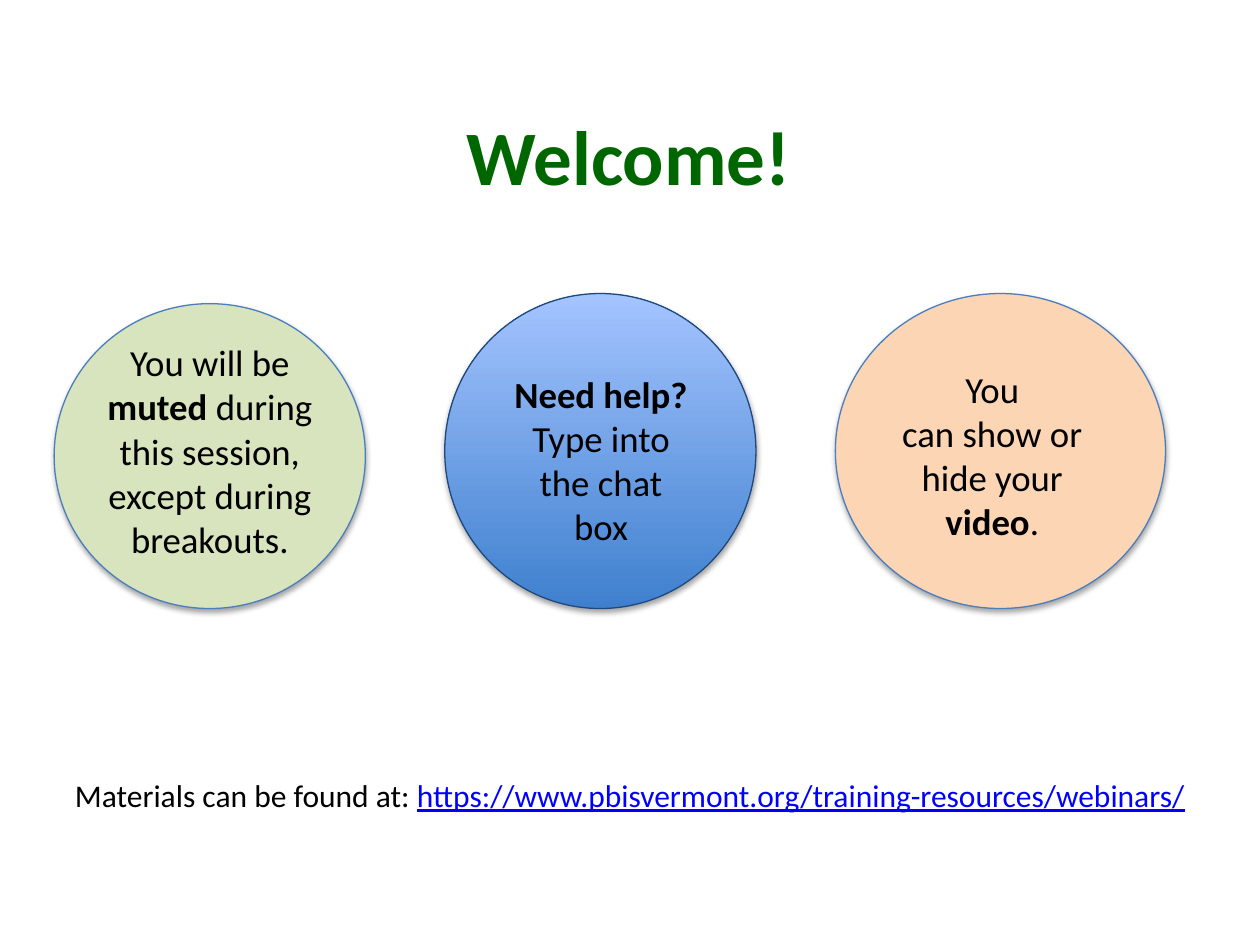
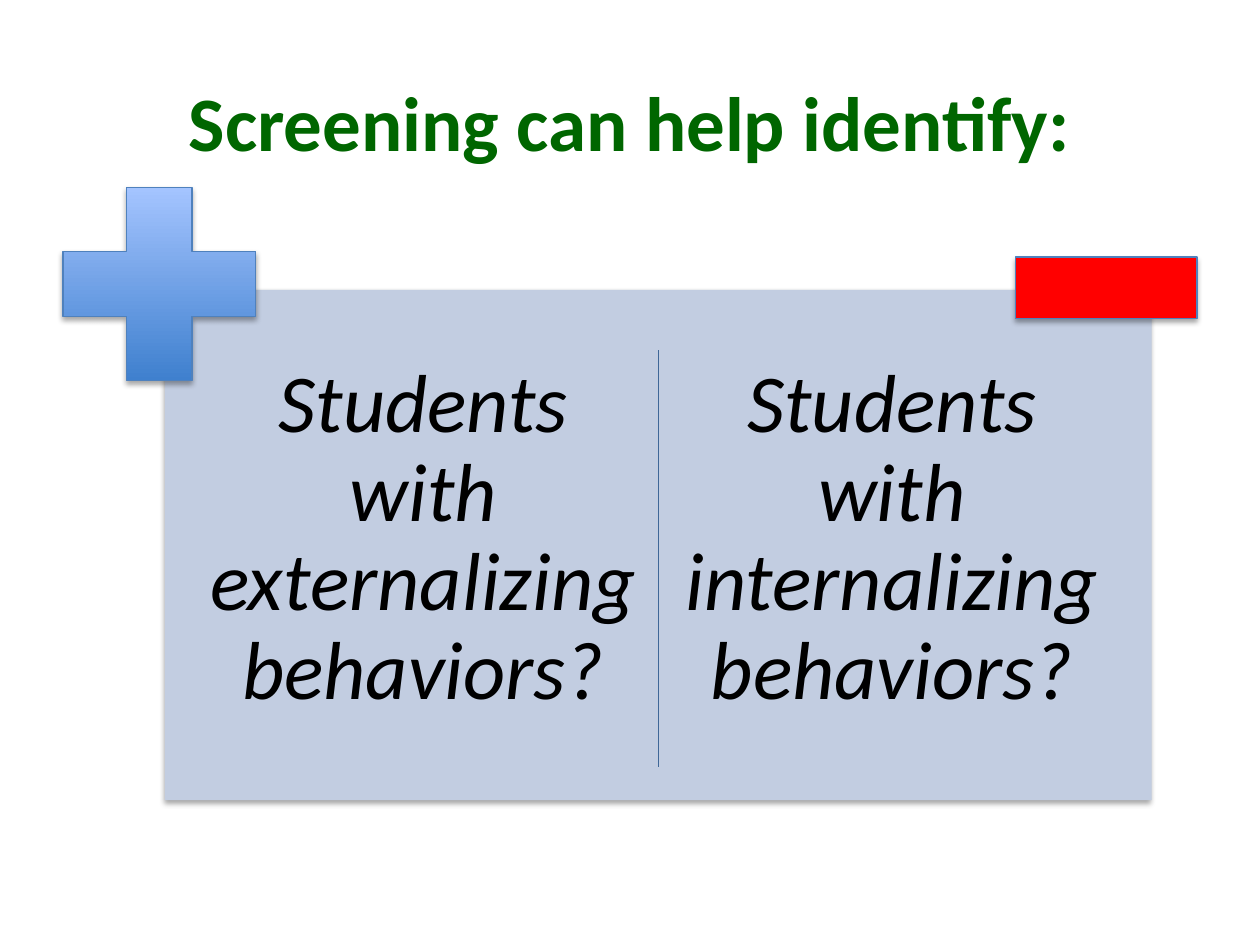
"""Builds a welcome slide and a slide on what screening can identify."""
from lxml.etree import SubElement
from pptx import Presentation
from pptx.dml.color import RGBColor
from pptx.enum.shapes import MSO_CONNECTOR as Connector, MSO_SHAPE as Shape
from pptx.enum.text import MSO_ANCHOR as Anchor, PP_ALIGN as Align
from pptx.oxml.ns import qn
from pptx.util import Emu, Inches, Pt

FONT = "Calibri"
BLACK = RGBColor(0x00, 0x00, 0x00)
TITLE_GREEN = RGBColor(0x00, 0x66, 0x00)
LINK_BLUE = RGBColor(0x00, 0x00, 0xFF)
PALE_GREEN = RGBColor(0xD7, 0xE4, 0xBD)
PEACH = RGBColor(0xFC, 0xD5, 0xB5)
RED = RGBColor(0xFF, 0x00, 0x00)
PANEL_BLUE = RGBColor(0xC2, 0xCD, 0xE1)
NAVY = RGBColor(0x1F, 0x49, 0x7D)
RING_BLUE = RGBColor(0x4B, 0x7E, 0xBC)
EDGE_BLUE = RGBColor(0x4F, 0x81, 0xBD)
DIVIDER_BLUE = RGBColor(0x3F, 0x67, 0x97)
BLUE_FADE = [RGBColor(0x3F, 0x80, 0xCE), RGBColor(0xA4, 0xC4, 0xFF)]

deck = Presentation()
deck.slide_width, deck.slide_height = Inches(10), Inches(7.5)
CELL = deck.slide_width // 100


def draw(page, cells, kind, fill, line=None):
    """Add a softly shadowed shape, placed in grid cells."""
    shape = page.shapes.add_shape(kind, *[Emu(cell * CELL) for cell in cells])
    if isinstance(fill, RGBColor):
        shape.fill.solid()
        shape.fill.fore_color.rgb = fill
    else:
        shape.fill.gradient()
        shape.fill.gradient_angle = 90
        for stop, color in zip(shape.fill.gradient_stops, fill):
            stop.color.rgb = color
    if line is None:
        shape.line.fill.background()
    else:
        shape.line.color.rgb = line
        shape.line.width = Pt(0.75)
    effects = SubElement(shape.element.spPr, qn("a:effectLst"))
    shadow = SubElement(effects, qn("a:outerShdw"), blurRad=str(Pt(3.1)),
                        dist=str(Pt(1.8)), dir="5400000", rotWithShape="0")
    color = SubElement(shadow, qn("a:srgbClr"), val="000000")
    SubElement(color, qn("a:alpha"), val="35000")
    return shape


def write(para, text, size, color=BLACK, bold=False, italic=False, underline=False):
    """Append a centred, formatted span of text to a paragraph."""
    para.alignment = Align.CENTER
    span = para.add_run()
    span.text = text
    font = span.font
    font.name, font.size, font.color.rgb = FONT, Pt(size), color
    font.bold, font.italic, font.underline = bold, italic, underline


pages = []
for heading, cells in [("Welcome!", (4.9, 6, 90, 12.5)),
                       ("Screening can help identify:", (5, 4.2, 90, 10.8))]:
    page = deck.slides.add_slide(deck.slide_layouts[5])
    title = page.shapes.title
    title.left, title.top, title.width, title.height = [Emu(cell * CELL) for cell in cells]
    title.text_frame.vertical_anchor = Anchor.MIDDLE
    write(title.text_frame.paragraphs[0], heading, 44, TITLE_GREEN, bold=True)
    pages.append(page)
welcome, screening = pages

circles = [
    ((4.3, 24.1, 24.7, 24.2), PALE_GREEN, RING_BLUE, (6.7, 26.5, 19.9, 18.7),
     ["You will be **muted** during this session, except during breakouts."]),
    ((35.3, 23.3, 24.7, 25), BLUE_FADE, NAVY, (39.5, 29, 16.4, 15.1),
     ["**Need help?**", "Type into the chat box"]),
    ((66.3, 23.3, 26.2, 25), PEACH, RING_BLUE, (68.8, 28.6, 19.9, 15.1),
     ["You", "can show or hide your **video**."]),
]
for cells, fill, line, label_cells, lines in circles:
    draw(welcome, cells, Shape.OVAL, fill, line)
    box = welcome.shapes.add_textbox(*[Emu(cell * CELL) for cell in label_cells])
    box.text_frame.word_wrap = True
    for row, text in enumerate(lines):
        para = box.text_frame.add_paragraph() if row else box.text_frame.paragraphs[0]
        for part, words in enumerate(text.split("**")):
            if words:
                write(para, words, 21, bold=part % 2 == 1)

box = welcome.shapes.add_textbox(0, Emu(61.1 * CELL), deck.slide_width, Emu(4 * CELL))
box.text_frame.word_wrap = True
para = box.text_frame.paragraphs[0]
write(para, "Materials can be found at: ", 18)
write(para, "https://www.pbisvermont.org/training-resources/webinars/", 18,
      LINK_BLUE, underline=True)

draw(screening, (13.1, 23, 78.3, 40.5), Shape.RECTANGLE, PANEL_BLUE)
for column, behavior in enumerate(["externalizing", "internalizing"]):
    cells = (15.4 + column * 37.2, 27.7, 36.4, 34.6)
    box = screening.shapes.add_textbox(*[Emu(cell * CELL) for cell in cells])
    frame = box.text_frame
    frame.word_wrap = True
    frame.margin_top = frame.margin_bottom = Emu(CELL)
    frame.paragraphs[0].line_spacing = 0.9
    write(frame.paragraphs[0], f"Students with {behavior} behaviors?", 47, italic=True)

plus = draw(screening, (5, 14.9, 15.3, 15.3), Shape.CROSS, BLUE_FADE, EDGE_BLUE)
plus.adjustments[0] = 0.33
draw(screening, (80.6, 20.4, 14.4, 4.9), Shape.RECTANGLE, RED, EDGE_BLUE)

divider = screening.shapes.add_connector(
    Connector.STRAIGHT, *[Emu(cell * CELL) for cell in (52.25, 27.8, 52.25, 60.9)])
divider.line.color.rgb = DIVIDER_BLUE
divider.line.width = Pt(0.75)
SubElement(divider.element.spPr, qn("a:effectLst"))

deck.save("out.pptx")
